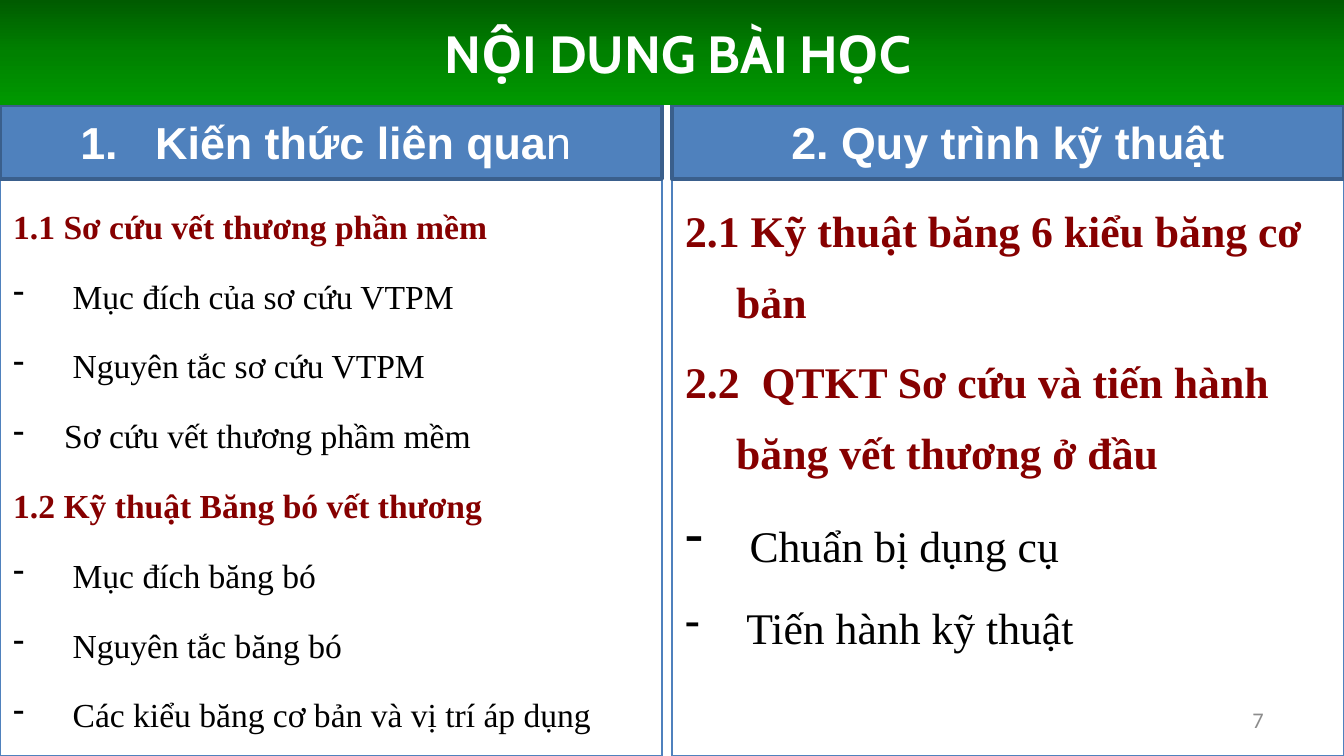
import copy

import pptx
import pptx.dml.color
import pptx.enum.shapes
import pptx.enum.text
import pptx.oxml
import pptx.oxml.ns
import pptx.util

PX = 9144000 / 1344
WIDTH, HEIGHT = 1344, 756
TITLE_HEIGHT, HEADER_HEIGHT = 105, 74
COLUMNS = ((0, 662), (672, 672))
BLUE, DARK_BLUE, MAROON = "4F81BD", "3A5F8C", "860000"
WHITE, BLACK, GREY = "FFFFFF", "000000", "8C8C8C"
SERIF = "Times New Roman"
ALIGN = pptx.enum.text.PP_ALIGN

KNOWLEDGE = (
    ("1.1 Sơ cứu vết thương phần mềm", False),
    (" Mục đích của sơ cứu VTPM", True),
    (" Nguyên tắc sơ cứu VTPM", True),
    ("Sơ cứu vết thương phầm mềm", True),
    ("1.2 Kỹ thuật Băng bó vết thương", False),
    (" Mục đích băng bó", True),
    (" Nguyên tắc băng bó", True),
    (" Các kiểu băng cơ bản và vị trí áp dụng", True),
)
PROCEDURE = (
    ("2.1 Kỹ thuật băng 6 kiểu băng cơ bản", False),
    ("2.2  QTKT Sơ cứu và tiến hành băng vết thương ở đầu", False),
    (" Chuẩn bị dụng cụ", True),
    (" Tiến hành kỹ thuật", True),
)


def px(length):
    return pptx.util.Emu(round(length * PX))


def rgb(value):
    return pptx.dml.color.RGBColor.from_string(value)


def style(span, font, size, color, bold=False):
    span.font.name = font
    span.font.size = pptx.util.Pt(size)
    span.font.color.rgb = rgb(color)
    span.font.bold = bold


def set_bullet(para, margin, hanging, tag, **attributes):
    """Give a paragraph a hanging indent and, if tag is set, a bullet."""
    properties = para._p.get_or_add_pPr()
    properties.set("marL", str(px(margin)))
    properties.set("indent", str(-px(hanging)))
    if tag:
        bullet = pptx.oxml.parse_xml(f"<a:{tag} {pptx.oxml.ns.nsdecls('a')}/>")
        for name, value in attributes.items():
            bullet.set(name, value)
        properties.append(bullet)


def add_box(page, box, line=None, line_width=1, fill=None, middle=True):
    shape = page.shapes.add_shape(
        pptx.enum.shapes.MSO_SHAPE.RECTANGLE, *map(px, box))
    shape.shadow.inherit = False
    if fill:
        shape.fill.solid()
        shape.fill.fore_color.rgb = rgb(fill)
    else:
        shape.fill.background()
    if line:
        shape.line.color.rgb = rgb(line)
        shape.line.width = pptx.util.Pt(line_width)
    else:
        shape.line.fill.background()
    anchor = pptx.enum.text.MSO_ANCHOR
    shape.text_frame.vertical_anchor = anchor.MIDDLE if middle else anchor.TOP
    shape.text_frame.word_wrap = True
    return shape


def add_title(page, box):
    shape = add_box(page, box)
    shape.fill.gradient()
    shape.fill.gradient_angle = 270
    first = shape._element.spPr.find(".//" + pptx.oxml.ns.qn("a:gs"))
    first.addnext(copy.deepcopy(first))
    colors = ("005B00", "008100", "009900")
    for index, stop in enumerate(shape.fill.gradient_stops):
        stop.position = index / 2
        stop.color.rgb = rgb(colors[index])
    para = shape.text_frame.paragraphs[0]
    para.text = " NỘI DUNG BÀI HỌC"
    para.alignment = ALIGN.CENTER
    style(para.runs[0], "Cabin", 28, WHITE, True)


def add_header(page, box):
    shape = add_box(page, box, DARK_BLUE, 2, BLUE)
    para = shape.text_frame.paragraphs[0]
    para.alignment = ALIGN.CENTER
    return para


def add_panel(page, box, items, size, line_spacing):
    """Outlined box of maroon headings and dashed points."""
    shape = add_box(page, box, BLUE, 0.75, middle=False)
    frame = shape.text_frame
    frame.text = "\n".join(text for text, dashed in items)
    for para, (text, dashed) in zip(frame.paragraphs, items):
        para.alignment = ALIGN.LEFT
        para.line_spacing = line_spacing
        para.space_before = pptx.util.Pt(5)
        set_bullet(para, 51, 51, "buChar" if dashed else None, char="-")
        style(para.runs[0], SERIF, size, BLACK if dashed else MAROON, not dashed)
    return frame


def add_page_number(page, box):
    number = page.shapes.add_textbox(*map(px, box))
    number.text_frame.word_wrap = True
    number.text_frame.vertical_anchor = pptx.enum.text.MSO_ANCHOR.MIDDLE
    para = number.text_frame.paragraphs[0]
    para.text = "7"
    para.alignment = ALIGN.RIGHT
    style(para.runs[0], "Calibri", 12, GREY)


def add_knowledge(page, left, width, top):
    body_top = top + HEADER_HEIGHT
    add_panel(page, (left, body_top, width, HEIGHT - body_top), KNOWLEDGE, 18, 1.5)
    para = add_header(page, (left, top, width, HEADER_HEIGHT))
    para.alignment = ALIGN.LEFT
    set_bullet(para, 142, 75, "buAutoNum", type="arabicPeriod")
    for text, bold in (("Kiến thức liên qua", True), ("n", False)):
        span = para.add_run()
        span.text = text
        style(span, "Arial", 24, WHITE, bold)


def add_procedure(page, left, width, top):
    body_top = top + HEADER_HEIGHT
    frame = add_panel(
        page, (left, body_top, width, HEIGHT - body_top), PROCEDURE, 23.4, 1.35)
    # The first dashed point opens with a larger space, which enlarges its dash.
    point = frame.paragraphs[2]
    words = point.add_run()
    words.text = point.runs[0].text.strip()
    style(words, SERIF, 23.4, BLACK)
    point.runs[0].text = " "
    point.runs[0].font.size = pptx.util.Pt(28.6)
    para = add_header(page, (left, top, width, HEADER_HEIGHT))
    para.text = "2. Quy trình kỹ thuật"
    style(para.runs[0], "Arial", 24, WHITE, True)


def main():
    deck = pptx.Presentation()
    deck.slide_width, deck.slide_height = px(WIDTH), px(HEIGHT)
    page = deck.slides.add_slide(deck.slide_layouts[6])
    add_knowledge(page, *COLUMNS[0], TITLE_HEIGHT)
    add_procedure(page, *COLUMNS[1], TITLE_HEIGHT)
    add_page_number(page, (963, 700, 314, 40))
    add_title(page, (0, 0, WIDTH, TITLE_HEIGHT))
    deck.save("out.pptx")


if __name__ == "__main__":
    main()
